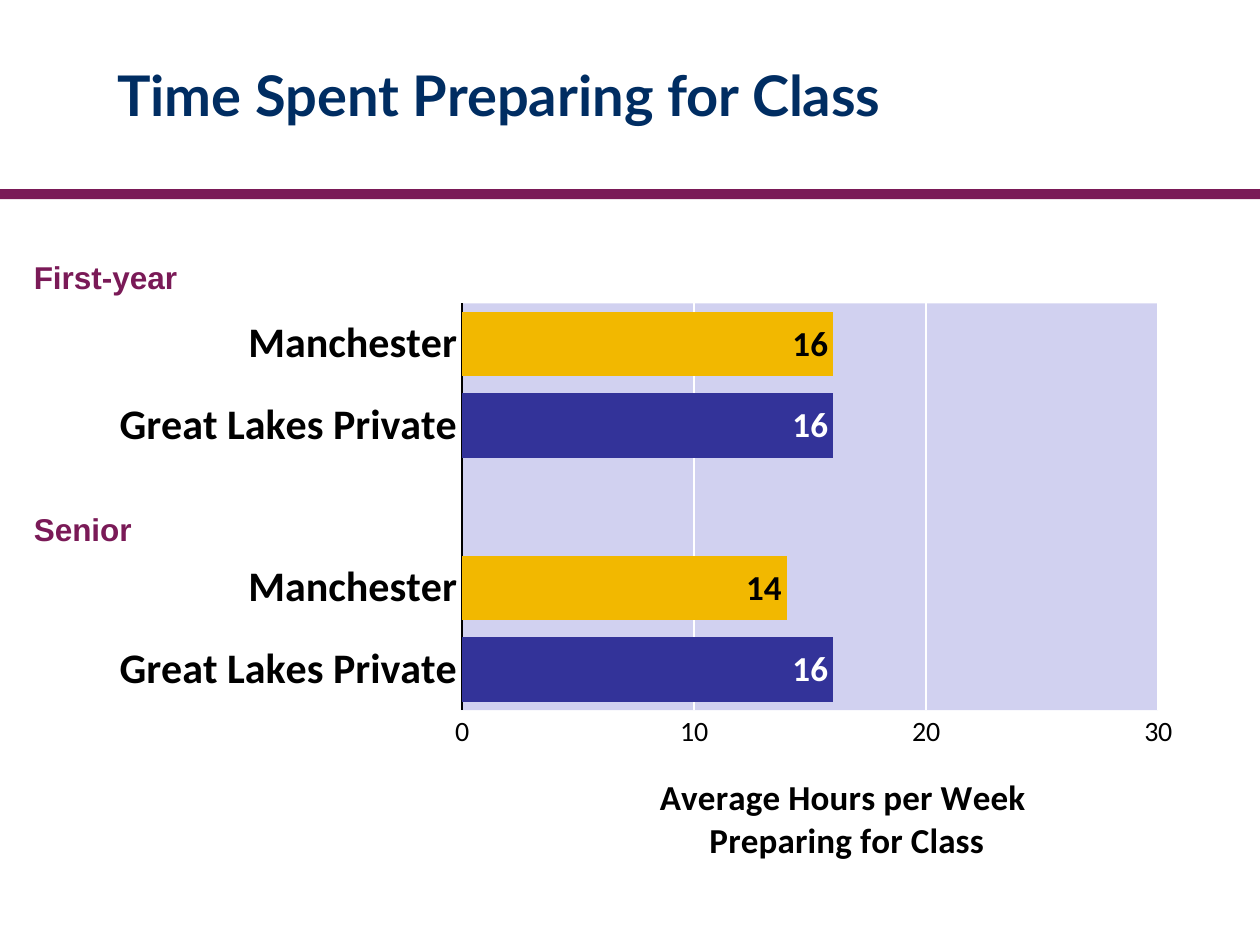
"""Build the slide on weekly hours spent preparing for class."""
from lxml.etree import SubElement
from pptx import Presentation
from pptx.chart.data import CategoryChartData
from pptx.dml.color import RGBColor
from pptx.enum.chart import XL_CHART_TYPE, XL_LABEL_POSITION as LabelPosition, XL_TICK_MARK as TickMark
from pptx.enum.shapes import MSO_SHAPE
from pptx.enum.text import MSO_ANCHOR, PP_ALIGN
from pptx.oxml import parse_xml
from pptx.oxml.ns import nsdecls, qn
from pptx.util import Inches, Pt

TITLE = "Time Spent Preparing for Class"
AXIS_TITLE = ["Average Hours per Week ", "Preparing for Class"]
GROUPS = [("First-year", 2), ("Senior", 4)]
BARS = [
    ("Great Lakes Private", 16, "peer"),
    ("Manchester", 14, "own"),
    ("", None, None),
    ("Great Lakes Private", 16, "peer"),
    ("Manchester", 16, "own"),
]
PLOT_LAYOUT = {"layoutTarget": "inner", "xMode": "edge", "yMode": "edge",
               "x": 0.352, "y": 0.017, "w": 0.614, "h": 0.705}
AXIS_TITLE_LAYOUT = {"xMode": "edge", "yMode": "edge", "x": 0.523, "y": 0.825}
THEME = {
    "title": ("Lato", 32, True, "002D62"),
    "group": ("Arial", 18, True, "7A1A57"),
    "category": ("Calibri", 24, True, "000000"),
    "tick": ("Calibri", 16, False, "000000"),
    "axis_title": ("Calibri", 20, True, "000000"),
    "peer_label": ("Calibri", 20, True, "FFFFFF"),
    "own_label": ("Calibri", 20, True, "000000"),
    "band": "7A1A57",
    "peer": "333399",
    "own": "F2B800",
    "plot": "D1D1F0",
    "grid": "FFFFFF",
    "axis": "000000",
}


def style_font(font, role):
    name, size, bold, color = THEME[role]
    font.name, font.size, font.bold = name, Pt(size), bold
    font.color.rgb = RGBColor.from_string(color)


def fill_solid(fill, role):
    fill.solid()
    fill.fore_color.rgb = RGBColor.from_string(THEME[role])


def style_line(line, role, width):
    fill_solid(line.fill, role)
    line.width = Pt(width)


def set_layout(parent, settings, index):
    for old in parent.findall(qn("c:layout")):
        parent.remove(old)
    layout = parse_xml(f"<c:layout {nsdecls('c')}/>")
    manual = SubElement(layout, qn("c:manualLayout"))
    for tag, value in settings.items():
        SubElement(manual, qn(f"c:{tag}")).set("val", str(value))
    parent.insert(index, layout)


def add_title(slide):
    title = slide.shapes.title
    title.left, title.top, title.width, title.height = map(Inches, (0.83, 0.12, 8.83, 1.25))
    frame = title.text_frame
    frame.text = TITLE
    frame.vertical_anchor = MSO_ANCHOR.MIDDLE
    frame.paragraphs[0].alignment = PP_ALIGN.LEFT
    style_font(frame.paragraphs[0].runs[0].font, "title")


def add_band(slide):
    band = slide.shapes.add_shape(MSO_SHAPE.RECTANGLE, 0, Inches(1.5), Inches(10), Inches(0.08))
    band.shadow.inherit = False
    fill_solid(band.fill, "band")
    band.line.fill.background()


def add_group_label(slide, text, top):
    box = slide.shapes.add_textbox(Inches(0.17), Inches(top), Inches(2), Inches(0.42))
    box.text_frame.word_wrap = True
    box.text_frame.text = text
    style_font(box.text_frame.paragraphs[0].runs[0].font, "group")


def format_plot_area(chart):
    area = chart.plots[0]._element.getparent()
    set_layout(area, PLOT_LAYOUT, 0)
    area.append(parse_xml(
        f'<c:spPr {nsdecls("c", "a")}><a:solidFill><a:srgbClr val="{THEME["plot"]}"/>'
        "</a:solidFill></c:spPr>"))


def format_axes(chart):
    category, value = chart.category_axis, chart.value_axis
    for axis, role in ((category, "category"), (value, "tick")):
        axis.major_tick_mark = axis.minor_tick_mark = TickMark.NONE
        style_font(axis.tick_labels.font, role)
    style_line(category.format.line, "axis", 1)
    value.format.line.fill.background()
    value.minimum_scale, value.maximum_scale, value.major_unit = 0, 30, 10
    value.tick_labels.number_format = "0"
    value.tick_labels.number_format_is_linked = False
    style_line(value.major_gridlines.format.line, "grid", 1.5)
    frame = value.axis_title.text_frame
    frame.text = "\n".join(AXIS_TITLE)
    for paragraph in frame.paragraphs:
        style_font(paragraph.runs[0].font, "axis_title")
    set_layout(value.axis_title._element, AXIS_TITLE_LAYOUT, 1)


def format_bars(chart):
    plot = chart.plots[0]
    plot.gap_width, plot.vary_by_categories = 26, False
    series = plot.series[0]
    labels = series.data_labels
    labels.show_value = True
    labels.number_format, labels.number_format_is_linked = "0", False
    labels.position = LabelPosition.INSIDE_END
    style_font(labels.font, "peer_label")
    for index, (_, _, owner) in enumerate(BARS):
        if owner:
            point = series.points[index]
            fill_solid(point.format.fill, owner)
            style_font(point.data_label.font, f"{owner}_label")
            point.data_label.position = LabelPosition.INSIDE_END
    for label in series._element.iter(qn("c:dLbl")):
        label.insert(1, parse_xml(
            f'<c:numFmt {nsdecls("c")} formatCode="0" sourceLinked="0"/>'))


def add_hours_chart(slide):
    data = CategoryChartData()
    data.categories = [name for name, _, _ in BARS]
    data.add_series("Series 1", [hours for _, hours, _ in BARS])
    chart = slide.shapes.add_chart(
        XL_CHART_TYPE.BAR_CLUSTERED, Inches(0.5), Inches(2.33), Inches(9), Inches(4.58), data).chart
    chart.has_legend = chart.has_title = False
    style_font(chart.font, "tick")
    format_axes(chart)
    format_bars(chart)
    format_plot_area(chart)


def main():
    presentation = Presentation()
    presentation.slide_width, presentation.slide_height = Inches(10), Inches(7.5)
    slide = presentation.slides.add_slide(presentation.slide_layouts[5])
    add_band(slide)
    add_title(slide)
    add_hours_chart(slide)
    for text, top in GROUPS:
        add_group_label(slide, text, top)
    presentation.save("out.pptx")


if __name__ == "__main__":
    main()
